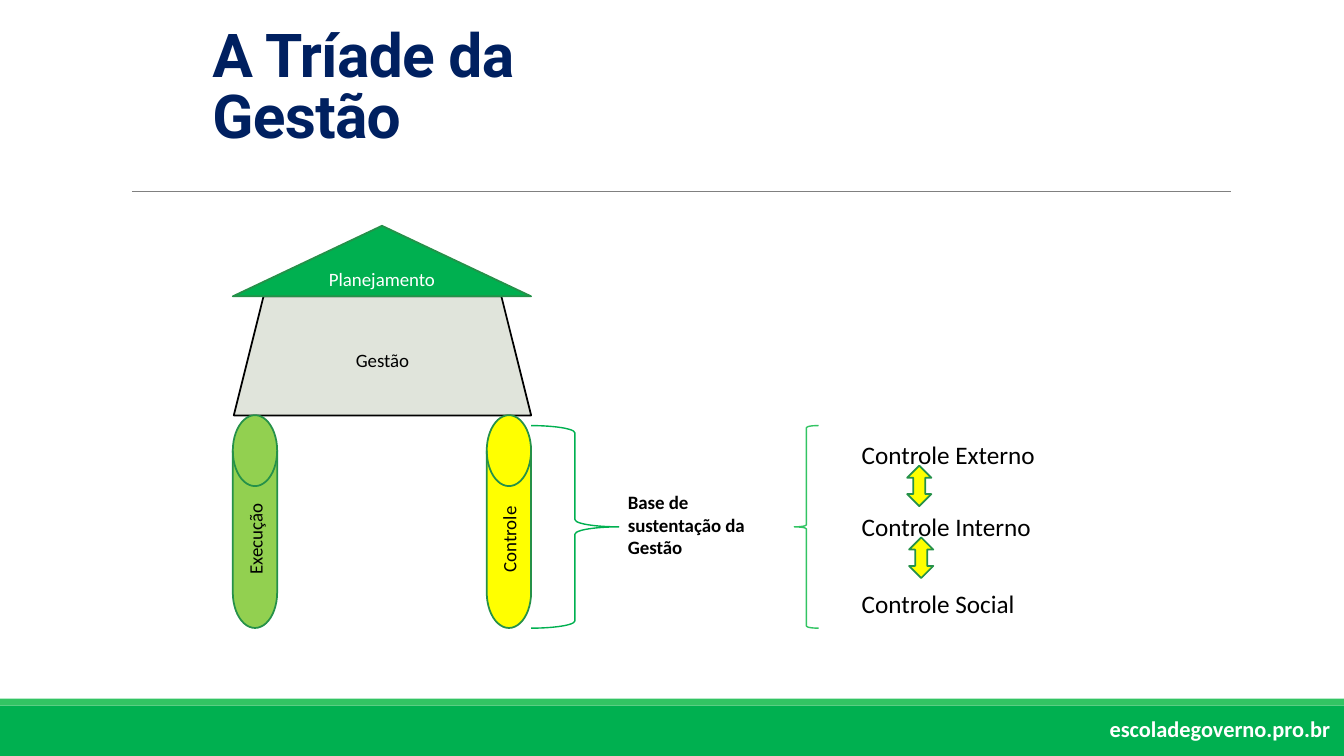
from pptx import Presentation, util as u
from pptx.dml.color import RGBColor
from pptx.enum import shapes, text
from pptx.oxml.ns import qn
from lxml import etree

MSO = shapes.MSO_SHAPE
GREEN, LIGHT, EDGE = "00B050", "32C463", "259149"
YELLOW, BLACK, WHITE = "FFFF00", "000000", "FFFFFF"


def rgb(value):
    return RGBColor.from_string(value)


class Deck:
    """Holds the text style and the current slide; lengths are in points."""

    style = {"name": "Calibri", "size": 13.5, "bold": False}

    def __init__(self, width, height):
        self.prs = Presentation()
        self.prs.slide_width, self.prs.slide_height = u.Pt(width), u.Pt(height)
        self.slide = self.prs.slides.add_slide(self.prs.slide_layouts[6])

    def add_words(self, tf, words, color, **fmt):
        p = tf.paragraphs[0]
        r = p.add_run()
        r.text = words
        for key, value in {**self.style, **fmt}.items():
            setattr(r.font, key, u.Pt(value) if key == "size" else value)
        r.font.color.rgb = rgb(color)
        return p, r

    def shape(self, kind, box, fill=None, line=None, weight=1.25,
              words=None, color=BLACK, upright=False):
        sp = self.slide.shapes.add_shape(kind, *map(u.Pt, box))
        sp.shadow.inherit = False
        for part, value in ((sp.fill, fill), (sp.line.fill, line)):
            if value:
                part.solid()
                part.fore_color.rgb = rgb(value)
            else:
                part.background()
        if line:
            sp.line.width = u.Pt(weight)
        if words:
            tf = sp.text_frame
            tf.vertical_anchor = text.MSO_ANCHOR.MIDDLE
            p, r = self.add_words(tf, words, color)
            p.alignment = text.PP_ALIGN.CENTER
            if upright:
                sp._element.txBody.bodyPr.set("vert", "vert270")
        return sp

    def label(self, box, words, color=BLACK, wrap=True,
              anchor=text.MSO_ANCHOR.TOP, **fmt):
        tf = self.slide.shapes.add_textbox(*map(u.Pt, box)).text_frame
        tf.word_wrap = wrap
        tf.vertical_anchor = anchor
        return self.add_words(tf, words, color, **fmt)

    def rule(self, x1, y1, x2, y2, color, weight):
        ln = self.slide.shapes.add_connector(
            shapes.MSO_CONNECTOR.STRAIGHT, *map(u.Pt, (x1, y1, x2, y2)))
        ln.line.color.rgb = rgb(color)
        ln.line.width = u.Pt(weight)
        etree.SubElement(ln._element.spPr, qn("a:effectLst"))


def main():
    d = Deck(960, 540)

    # Footer bands, site address and header rule
    d.shape(MSO.RECTANGLE, (0, 504, 960, 36), GREEN)
    d.shape(MSO.RECTANGLE, (0, 499, 960, 5), LIGHT)
    d.rule(94.3, 136.8, 879, 136.8, "808080", 0.5)
    d.label((785.5, 507, 174.2, 26.6), "escoladegoverno.pro.br", WHITE,
            wrap=False, size=16, bold=True)

    # Title
    p, r = d.label((144.7, 72, 364.3, 39.6), "A Tríade da Gestão", "002060",
                   anchor=text.MSO_ANCHOR.BOTTOM,
                   name="Roboto", size=43.2, bold=True)
    p.line_spacing = 0.85
    r._r.get_or_add_rPr().set("spc", "-50")

    # House: walls, roof and two pillars
    left, right, base, pillar = 166.3, 379.4, 296.6, 31.7
    d.shape(MSO.TRAPEZOID, (left + 0.7, 211.7, 212.4, 85), "E0E4DB", BLACK,
            words="Gestão")
    d.shape(MSO.ISOSCELES_TRIANGLE, (left, 161.3, right - left, 50.4),
            GREEN, EDGE, words="Planejamento", color=WHITE)
    for x, fill, words in ((left, "92D050", "Execução"),
                           (right - pillar, YELLOW, "Controle")):
        d.shape(MSO.FLOWCHART_MAGNETIC_DISK, (x, base, pillar, 152), fill,
                EDGE, words=words, upright=True)

    # Braces around the supporting base
    d.shape(MSO.RIGHT_BRACE, (right, 304, 62.6, 144.7), line=GREEN, weight=1)
    d.label((441.4, 347, 110.9, 56.2), "Base de sustentação da Gestão",
            bold=True)
    d.shape(MSO.LEFT_BRACE, (567.4, 304, 17.3, 144.7), line=LIGHT, weight=1)

    # Kinds of control, with an arrow below all but the last
    for y, kind, arrow_x in ((310.3, "Externo", 648), (361.6, "Interno", 649.4),
                             (416.9, "Social", None)):
        d.label((608.4, y, 158.4, 29), f"Controle {kind}", size=18)
        if arrow_x:
            d.shape(MSO.UP_DOWN_ARROW, (arrow_x, y + 22.3, 17.3, 29),
                    YELLOW, EDGE)

    d.prs.save("out.pptx")


if __name__ == "__main__":
    main()
